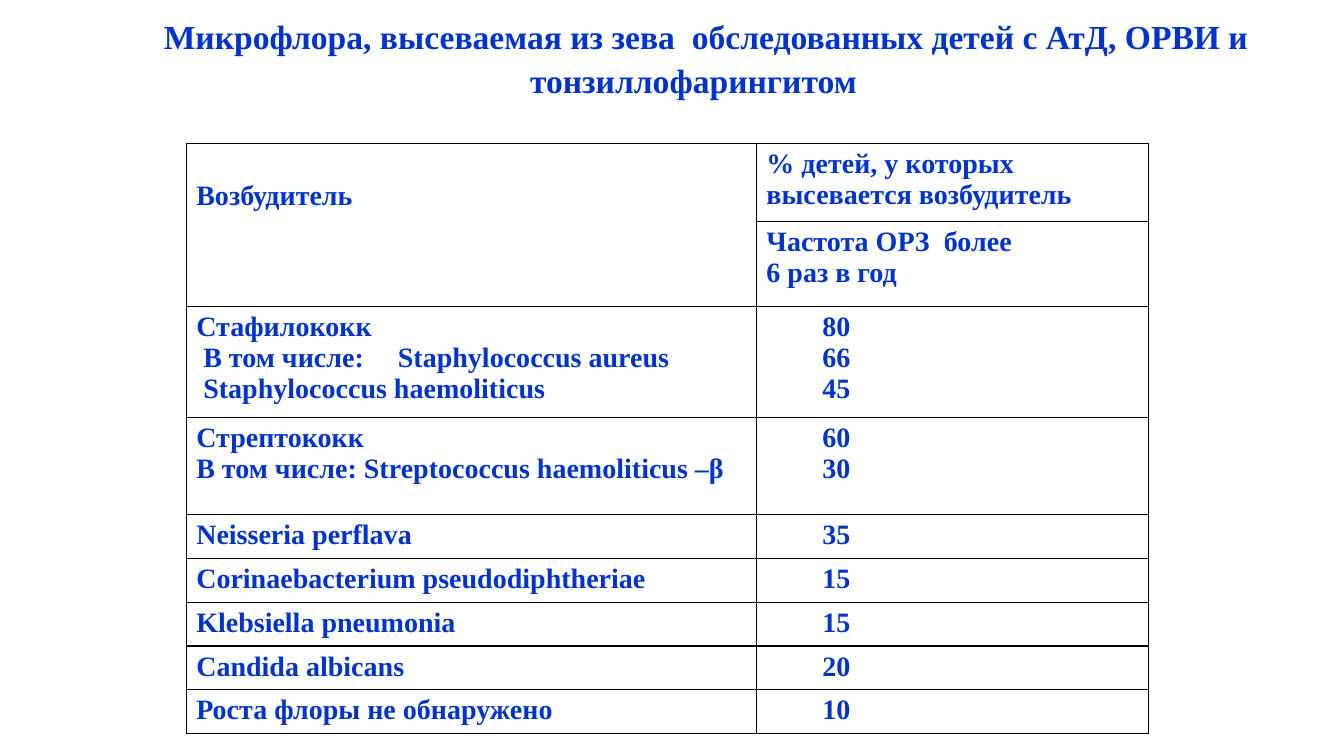
from lxml import etree
from pptx import Presentation
from pptx import util as u
from pptx.dml.color import RGBColor
from pptx.enum import text as t
from pptx.oxml import ns

Pt = u.Pt
BLUE, BLACK = "0033CC", "000000"
FACE = "Times New Roman"
NUM = 40  # first-line indent of the numbers
SUB = 5  # first-line indent of the subspecies

# Each row: height, left lines, right lines, indents of the left lines
ROWS = [
    (55.7, ["Возбудитель"], ["% детей, у которых высевается возбудитель"], [0]),
    (60.7, [], ["Частота ОРЗ  более", "6 раз в год"], []),
    (79.2, ["Стафилококк", "В том числе:\tStaphylococcus aureus",
            "Staphylococcus haemoliticus"], ["80", "66", "45"], [0, SUB, SUB]),
    (69.5, ["Стрептококк", "В том числе: Streptococcus haemoliticus –β"],
     ["60", "30"], [0, 0]),
    (31.25, ["Neisseria perflava"], ["35"], [0]),
    (31.25, ["Corinaebactеrium pseudodiphtheriае"], ["15"], [0]),
    (31.25, ["Klebsiella pneumonia"], ["15"], [0]),
    (31.25, ["Candida albicans"], ["20"], [0]),
    (31.25, ["Роста флоры не обнаружено"], ["10"], [0]),
]


def rgb(hexa):
    return RGBColor.from_string(hexa)


def style(para, size, indent=0):
    font = para.font
    font.name, font.size, font.bold = FACE, Pt(size), True
    font.color.rgb = rgb(BLUE)
    props = para._p.get_or_add_pPr()
    props.set("marL", "0")
    props.set("indent", str(Pt(indent)))
    return props


def add_tab(props, pos):
    tabs = etree.Element(ns.qn("a:tabLst"))
    etree.SubElement(tabs, ns.qn("a:tab"), pos=str(Pt(pos)), algn="l")
    props.insert(0, tabs)


def border(cell):
    props = cell._tc.get_or_add_tcPr()
    for side in ("a:lnL", "a:lnR", "a:lnT", "a:lnB"):
        line = etree.SubElement(props, ns.qn(side), w=str(Pt(1)))
        fill = etree.SubElement(line, ns.qn("a:solidFill"))
        etree.SubElement(fill, ns.qn("a:srgbClr"), val=BLACK)


def fill_cell(cell, lines, indents):
    border(cell)
    cell.fill.background()
    frame = cell.text_frame
    for i, (line, indent) in enumerate(zip(lines, indents)):
        para = frame.paragraphs[0] if i == 0 else frame.add_paragraph()
        para.text = line
        props = style(para, 20, indent)
        if "\t" in line:
            add_tab(props, 145)


def add_title(slide, words):
    box = slide.shapes.add_textbox(Pt(41), Pt(-4.3), Pt(908.6), Pt(80))
    frame = box.text_frame
    frame.word_wrap = True
    frame.vertical_anchor = t.MSO_ANCHOR.MIDDLE
    frame.margin_top = Pt(12.6)
    para = frame.paragraphs[0]
    para.text = words
    para.alignment = t.PP_ALIGN.CENTER
    para.line_spacing = Pt(31.4)
    style(para, 24, 18)


def add_grid(slide):
    high = sum(row[0] for row in ROWS)
    table = slide.shapes.add_table(
        len(ROWS), 2, Pt(133), Pt(102.6), Pt(687.4), Pt(high)).table
    table.first_row = table.horz_banding = False
    table.columns[0].width, table.columns[1].width = Pt(407.3), Pt(280.1)
    for i, (size, left, right, indents) in enumerate(ROWS):
        table.rows[i].height = Pt(size)
        fill_cell(table.cell(i, 0), left, indents)
        shift = NUM if right[0].isdigit() else 0
        fill_cell(table.cell(i, 1), right, [shift] * len(right))
    # The left heading spans both header rows, one line down
    head = table.cell(0, 0)
    head.merge(table.cell(1, 0))
    head.margin_top = Pt(26)


def main():
    deck = Presentation()
    deck.slide_width, deck.slide_height = Pt(960), Pt(540)
    slide = deck.slides.add_slide(deck.slide_layouts[6])
    add_title(slide, "Микрофлора, высеваемая из зева  обследованных детей "
                     "с АтД, ОРВИ и тонзиллофарингитом")
    add_grid(slide)
    deck.save("out.pptx")


if __name__ == "__main__":
    main()
